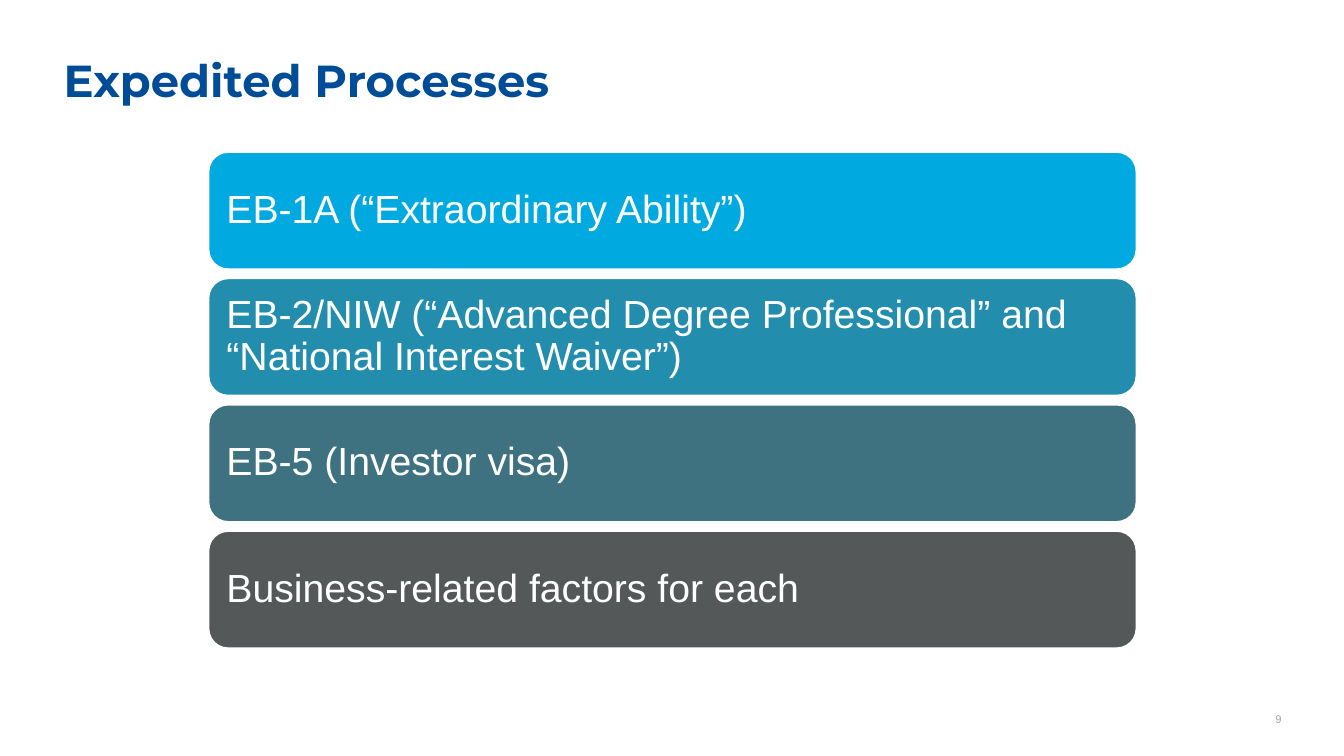
from pptx import Presentation
from pptx.dml.color import RGBColor
from pptx.enum.shapes import MSO_SHAPE
from pptx.enum.text import MSO_ANCHOR, PP_ALIGN
from pptx.util import Inches, Pt

PROCESSES = [
    ("EB-1A (“Extraordinary Ability”)", "00A9E0"),
    ("EB-2/NIW (“Advanced Degree Professional” and “National Interest Waiver”)", "228DAD"),
    ("EB-5 (Investor visa)", "3E7280"),
    ("Business-related factors for each", "545859"),
]
FIRST_TOP, LAST_TOP = 1.51, 5.27


def rgb(value):
    return RGBColor.from_string(value)


def set_text(sp, text, size, color, font="Arial", bold=False, inset=0,
             anchor=MSO_ANCHOR.TOP, align=PP_ALIGN.LEFT, spacing=1.0):
    tf = sp.text_frame
    tf.word_wrap = True
    tf.vertical_anchor = anchor
    tf.margin_left = tf.margin_right = Inches(inset)
    tf.margin_top = tf.margin_bottom = Inches(inset)
    p = tf.paragraphs[0]
    p.text = text
    p.alignment = align
    p.line_spacing = spacing
    p.font.name = font
    p.font.size = Pt(size)
    p.font.bold = bold
    p.font.color.rgb = rgb(color)


def add_title(s, text):
    sp = s.shapes.title
    sp.left, sp.top = Inches(0.63), Inches(0.63)
    sp.width, sp.height = Inches(12.07), Inches(0.5)
    set_text(sp, text, 32, "004C97", font="Montserrat", bold=True, spacing=0.8)


def add_bar(s, top, text, fill):
    sp = s.shapes.add_shape(MSO_SHAPE.ROUNDED_RECTANGLE, Inches(2.07), Inches(top),
                            Inches(9.2), Inches(1.16))
    sp.shadow.inherit = False
    sp.fill.solid()
    sp.fill.fore_color.rgb = rgb(fill)
    sp.line.color.rgb = rgb("FFFFFF")
    sp.line.width = Pt(1)
    set_text(sp, text, 28, "FFFFFF", inset=0.12, anchor=MSO_ANCHOR.MIDDLE, spacing=0.9)


def add_page_number(s, number):
    sp = s.shapes.add_textbox(Inches(11.99), Inches(7.07), Inches(0.72), Inches(0.2))
    set_text(sp, number, 8, "A8A2A2", align=PP_ALIGN.RIGHT)


def main():
    prs = Presentation()
    prs.slide_width, prs.slide_height = Inches(13.33), Inches(7.5)
    s = prs.slides.add_slide(prs.slide_layouts[5])
    add_title(s, "Expedited Processes")
    pitch = (LAST_TOP - FIRST_TOP) / (len(PROCESSES) - 1)
    for i, (text, fill) in enumerate(PROCESSES):
        add_bar(s, FIRST_TOP + i * pitch, text, fill)
    add_page_number(s, "9")
    prs.save("out.pptx")


if __name__ == "__main__":
    main()
